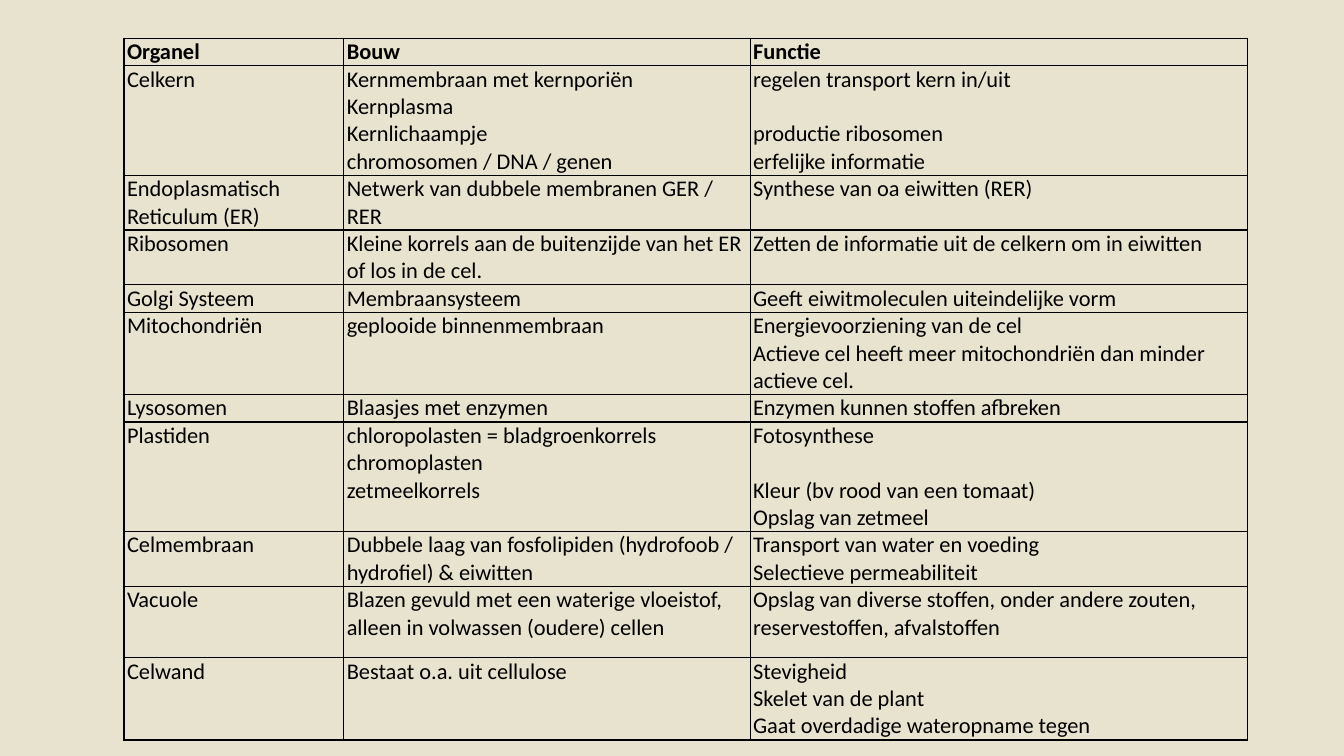
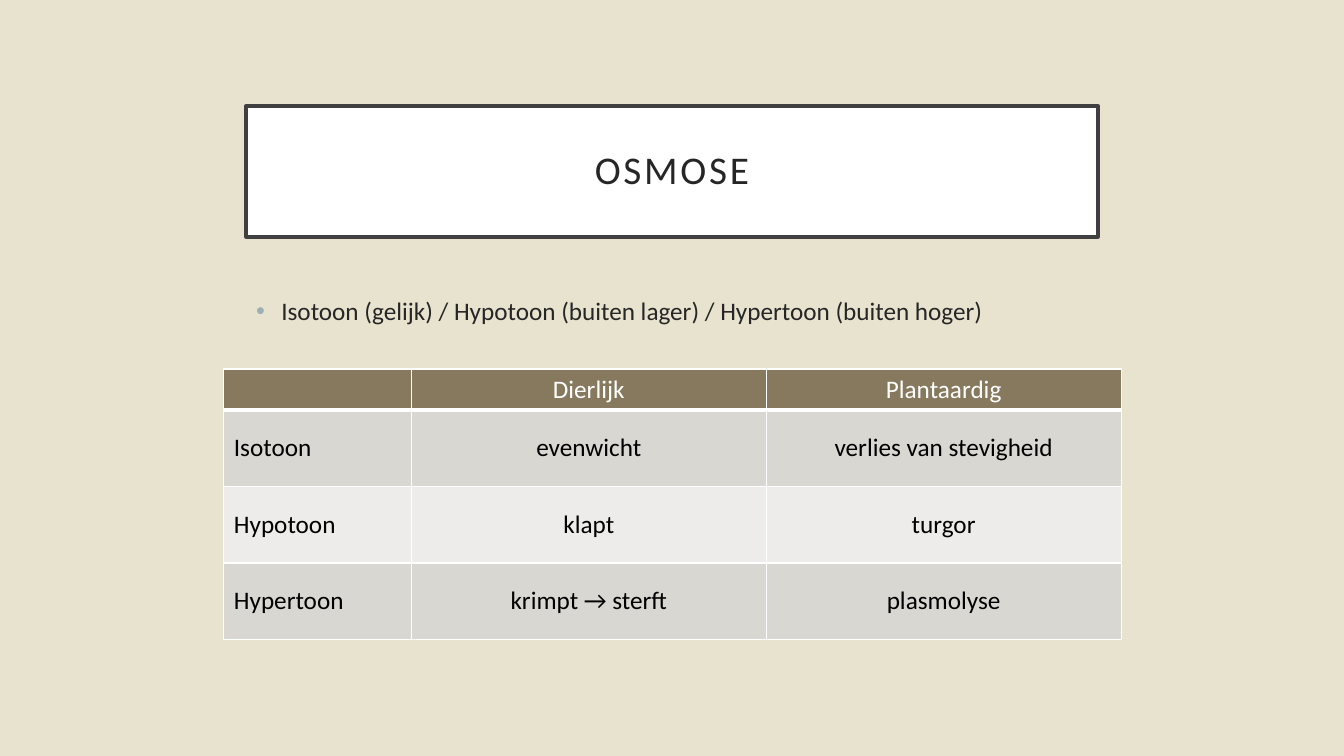
from dataclasses import dataclass

from lxml.etree import SubElement
from pptx import Presentation
from pptx.dml.color import RGBColor
from pptx.enum.text import MSO_ANCHOR, MSO_AUTO_SIZE, PP_ALIGN
from pptx.oxml.ns import qn
from pptx.util import Inches, Pt


@dataclass(frozen=True)
class Theme:
    font: str = "Calibri"
    back: str = "E8E3CE"
    white: str = "FFFFFF"
    black: str = "000000"
    ink: str = "262626"
    frame: str = "404040"
    dot: str = "9BAFB5"
    head: str = "87795D"
    bands: tuple = ("D9D7D2", "EDECEA")
    title: int = 28
    body: int = 18
    small: int = 16
    line: float = 1.22  # line height per point of type


THEME = Theme()


def rgb(code):
    return RGBColor.from_string(code)


def write(frame, text, size=THEME.body, color=THEME.black, bold=False,
          align=PP_ALIGN.LEFT, track=0, lead=None):
    """Fill a frame, one paragraph a line; an empty line becomes space before."""
    frame.word_wrap = True
    part, gap = frame.paragraphs[0], 0
    for count, line in enumerate(text.split("\n")):
        if not line:
            gap += size * THEME.line
            continue
        if count:
            part = frame.add_paragraph()
        part.alignment = align
        part.space_before = Pt(gap)
        part.line_spacing = lead
        gap = 0
        run = part.add_run()
        run.text = line
        font = run.font
        font.name, font.size, font.bold = THEME.font, Pt(size), bold
        font.color.rgb = rgb(color)
        if track:
            run._r.get_or_add_rPr().set("spc", str(track * 100))


def edge(cell, side, color, width):
    line = SubElement(cell._tc.get_or_add_tcPr(), qn(f"a:ln{side}"), w=str(Pt(width)))
    fill = SubElement(line, qn("a:solidFill"))
    SubElement(fill, qn("a:srgbClr"), val=color)


def bullet(part, indent, color):
    props = part._p.get_or_add_pPr()
    props.set("marL", str(indent))
    props.set("indent", str(-indent))
    tint = SubElement(props, qn("a:buClr"))
    SubElement(tint, qn("a:srgbClr"), val=color)
    SubElement(props, qn("a:buFont"), typeface="Arial")
    SubElement(props, qn("a:buChar"), char="•")


class Deck:
    def __init__(self, theme):
        self.theme = theme
        self.show = Presentation()
        self.show.slide_width, self.show.slide_height = Inches(13.33), Inches(7.5)
        fill = self.show.slide_master.background.fill
        fill.solid()
        fill.fore_color.rgb = rgb(theme.back)
        self.slide = None

    def page(self, layout):
        layouts = self.show.slide_layouts
        self.slide = self.show.slides.add_slide(layouts.get_by_name(layout))

    def place(self, shape, box):
        shape.left, shape.top, shape.width, shape.height = map(Inches, box)
        shape.text_frame.auto_size = MSO_AUTO_SIZE.NONE
        return shape.text_frame

    def title(self, text, box):
        shape = self.slide.shapes.title
        frame = self.place(shape, box)
        shape.fill.solid()
        shape.fill.fore_color.rgb = rgb(self.theme.white)
        shape.line.color.rgb = rgb(self.theme.frame)
        shape.line.width = Pt(2.5)
        frame.vertical_anchor = MSO_ANCHOR.MIDDLE
        frame.margin_left = frame.margin_right = Inches(0.2)
        frame.margin_top = frame.margin_bottom = Inches(0.2)
        write(frame, text, size=self.theme.title, color=self.theme.ink,
              align=PP_ALIGN.CENTER, track=2, lead=0.9)

    def list(self, text, box):
        frame = self.place(self.slide.placeholders[1], box)
        frame.vertical_anchor = MSO_ANCHOR.TOP
        write(frame, text, color=self.theme.ink)
        for part in frame.paragraphs:
            bullet(part, Inches(0.25), self.theme.dot)

    def table(self, rows, left, top, widths, heights, style, rule, rim=1,
              pad=(0.1, 0.05), anchor=MSO_ANCHOR.TOP):
        """Draw a table; style(row, col) gives a cell's fill and text format."""
        shape = self.slide.shapes.add_table(
            len(rows), len(widths), Inches(left), Inches(top),
            Inches(sum(widths)), Inches(sum(heights)))
        grid = shape.table
        grid.first_row = grid.horz_banding = False
        for col, width in zip(grid.columns, widths):
            col.width = Inches(width)
        for row, height in zip(grid.rows, heights):
            row.height = Inches(height)
        for r, texts in enumerate(rows):
            for c, text in enumerate(texts):
                cell = grid.cell(r, c)
                cell.margin_left = cell.margin_right = Inches(pad[0])
                cell.margin_top = cell.margin_bottom = Inches(pad[1])
                cell.vertical_anchor = anchor
                for side in "LRTB":
                    under = (r, side) in ((0, "B"), (1, "T"))
                    edge(cell, side, rule, rim if under else 1)
                fill, form = style(r, c)
                if fill:
                    cell.fill.solid()
                    cell.fill.fore_color.rgb = rgb(fill)
                else:
                    cell.fill.background()
                if text:
                    write(cell.text_frame, text, **form)

    def save(self):
        self.show.save("out.pptx")


PARTS = [
    ("Organel", "Bouw", "Functie"),
    ("Celkern",
     "Kernmembraan met kernporiën\nKernplasma\nKernlichaampje\nchromosomen / DNA / genen",
     "regelen transport kern in/uit\n\nproductie ribosomen\nerfelijke informatie"),
    ("Endoplasmatisch Reticulum (ER)", "Netwerk van dubbele membranen GER / RER",
     "Synthese van oa eiwitten (RER)"),
    ("Ribosomen", "Kleine korrels aan de buitenzijde van het ER of los in de cel.",
     "Zetten de informatie uit de celkern om in eiwitten"),
    ("Golgi Systeem", "Membraansysteem", "Geeft eiwitmoleculen uiteindelijke vorm"),
    ("Mitochondriën", "geplooide binnenmembraan",
     "Energievoorziening van de cel\n"
     "Actieve cel heeft meer mitochondriën dan minder actieve cel."),
    ("Lysosomen", "Blaasjes met enzymen", "Enzymen kunnen stoffen afbreken"),
    ("Plastiden", "chloropolasten = bladgroenkorrels\nchromoplasten\nzetmeelkorrels",
     "Fotosynthese\n\nKleur (bv rood van een tomaat)\nOpslag van zetmeel"),
    ("Celmembraan", "Dubbele laag van fosfolipiden (hydrofoob / hydrofiel) & eiwitten",
     "Transport van water en voeding\nSelectieve permeabiliteit"),
    ("Vacuole",
     "Blazen gevuld met een waterige vloeistof, alleen in volwassen (oudere) cellen",
     "Opslag van diverse stoffen, onder andere zouten, reservestoffen, afvalstoffen"),
    ("Celwand", "Bestaat o.a. uit cellulose",
     "Stevigheid\nSkelet van de plant\nGaat overdadige wateropname tegen"),
]
LINES = (1, 4, 2, 2, 1, 3, 1, 4, 2, 2.63, 3)

STATES = [
    ("", "Dierlijk", "Plantaardig"),
    ("Isotoon", "evenwicht", "verlies van stevigheid"),
    ("Hypotoon", "klapt", "turgor"),
    ("Hypertoon", "krimpt → sterft", "plasmolyse"),
]


def plain(row, col):
    return None, {"size": THEME.small, "bold": row == 0}


def banded(row, col):
    align = PP_ALIGN.CENTER if col else PP_ALIGN.LEFT
    if row == 0:
        return THEME.head, {"color": THEME.white, "align": align}
    return THEME.bands[(row - 1) % 2], {"align": align}


def main():
    deck = Deck(THEME)

    deck.page("Blank")
    deck.table(PARTS, 1.23, 0.38, (2.18, 4.03, 4.93), [n * 0.27 for n in LINES],
               plain, THEME.black, pad=(0.03, 0))

    deck.page("Title and Content")
    deck.title("OSMOSE", (2.44, 1.05, 8.45, 1.3))
    deck.list("Isotoon (gelijk) / Hypotoon (buiten lager) / Hypertoon (buiten hoger)",
              (2.44, 2.88, 8.45, 3.39))
    deck.table(STATES, 2.22, 3.66, (1.86, 3.52, 3.52), [0.4] + [0.76] * 3,
               banded, THEME.white, rim=3, anchor=MSO_ANCHOR.MIDDLE)

    deck.save()


if __name__ == "__main__":
    main()
